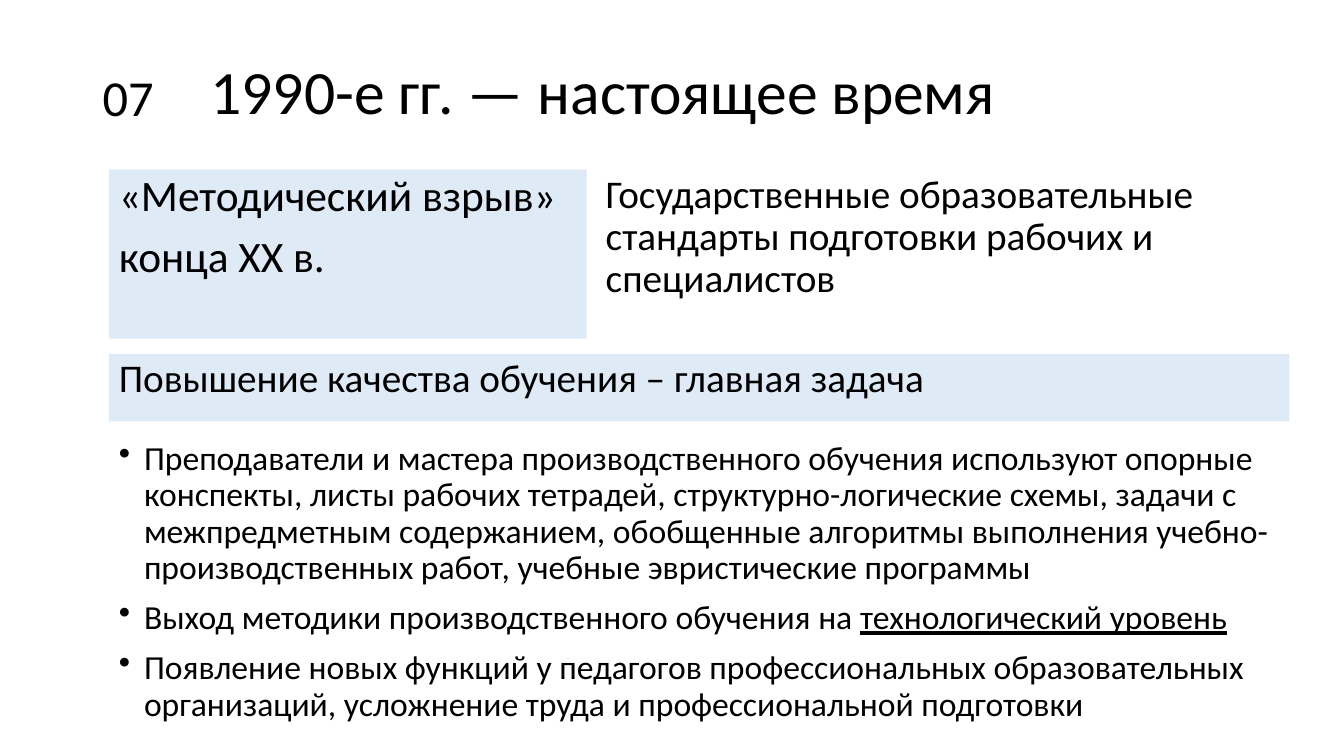
import pptx
import pptx.util
import pptx.dml.color
import pptx.enum.shapes
import pptx.enum.text
import lxml.etree

Inches = pptx.util.Inches
Pt = pptx.util.Pt
BLACK = pptx.dml.color.RGBColor(0x00, 0x00, 0x00)
PALE = pptx.dml.color.RGBColor(0xDE, 0xEB, 0xF7)
LEFT = 1.08
WIDE = 11.71
TOP = 1.68


def bullet(para):
    """Give a paragraph a hanging round bullet."""
    props = para._p.get_or_add_pPr()
    props.set("marL", str(Inches(0.25)))
    props.set("indent", str(-Inches(0.25)))
    mark = lxml.etree.SubElement(props, pptx.oxml.ns.qn("a:buChar"))
    mark.set("char", "•")


def write(frame, paras, size, font="Calibri", color=BLACK, line=0.9, before=10,
          anchor=pptx.enum.text.MSO_ANCHOR.TOP, dots=False):
    """Fill a frame with paragraphs, each a list of (text, underlined) runs."""
    frame.word_wrap = True
    frame.vertical_anchor = anchor
    for i, runs in enumerate(paras):
        para = frame.add_paragraph() if i else frame.paragraphs[0]
        para.alignment = pptx.enum.text.PP_ALIGN.LEFT
        para.line_spacing = line
        para.space_before = Pt(before)
        if dots:
            bullet(para)
        for text, under in runs:
            run = para.add_run()
            run.text = text
            run.font.size = Pt(size)
            run.font.name = font
            run.font.color.rgb = color
            run.font.underline = under


class Page:
    """Hold the slide and its style."""

    def __init__(self, deck, fill=PALE):
        """Add a blank slide to the deck."""
        self.shapes = deck.slides.add_slide(deck.slide_layouts[6]).shapes
        self.fill = fill

    def text(self, box, paras, size, **style):
        """Add a plain text box."""
        item = self.shapes.add_textbox(*map(Inches, box))
        write(item.text_frame, paras, size, **style)

    def panel(self, box, paras, size, **style):
        """Add a filled panel with text."""
        kind = pptx.enum.shapes.MSO_SHAPE.RECTANGLE
        item = self.shapes.add_shape(kind, *map(Inches, box))
        item.shadow.inherit = False
        item.fill.solid()
        item.fill.fore_color.rgb = self.fill
        item.line.fill.background()
        write(item.text_frame, paras, size, **style)


def main():
    """Build and save the slide."""
    deck = pptx.Presentation()
    deck.slide_width = Inches(13.33)
    deck.slide_height = Inches(7.5)
    page = Page(deck)

    page.text((1.99, 0.4, 10.43, 1.07),
              [[("1990-е гг. — настоящее время", False)]], 44,
              before=0, anchor=pptx.enum.text.MSO_ANCHOR.MIDDLE)
    page.text((0.92, 0.61, 1.07, 0.71), [[("07", False)]], 36,
              line=1.0, before=0)
    page.text((5.91, TOP, 7.14, 1.68),
              [[("Государственные образовательные стандарты подготовки "
                 "рабочих и специалистов", False)]], 28)
    page.panel((LEFT, TOP, 4.74, 1.68),
               [[("«Методический взрыв»", False)],
                [("конца XX в.", False)]], 31)
    page.panel((LEFT, 3.51, WIDE, 0.67),
               [[("Повышение качества обучения – главная задача", False)]], 28)
    page.text((LEFT, 4.33, WIDE, 2.41), [
        [("Преподаватели и мастера производственного обучения используют "
          "опорные конспекты, листы рабочих тетрадей, структурно-логические "
          "схемы, задачи с межпредметным содержанием, обобщенные алгоритмы "
          "выполнения учебно-производственных работ, учебные эвристические "
          "программы", False)],
        [("Выход методики производственного обучения на ", False),
         ("технологический уровень", True)],
        [("Появление новых функций у педагогов профессиональных "
          "образовательных организаций, усложнение труда и "
          "профессиональной подготовки", False)],
    ], 24, dots=True)
    deck.save("out.pptx")


if __name__ == "__main__":
    main()
